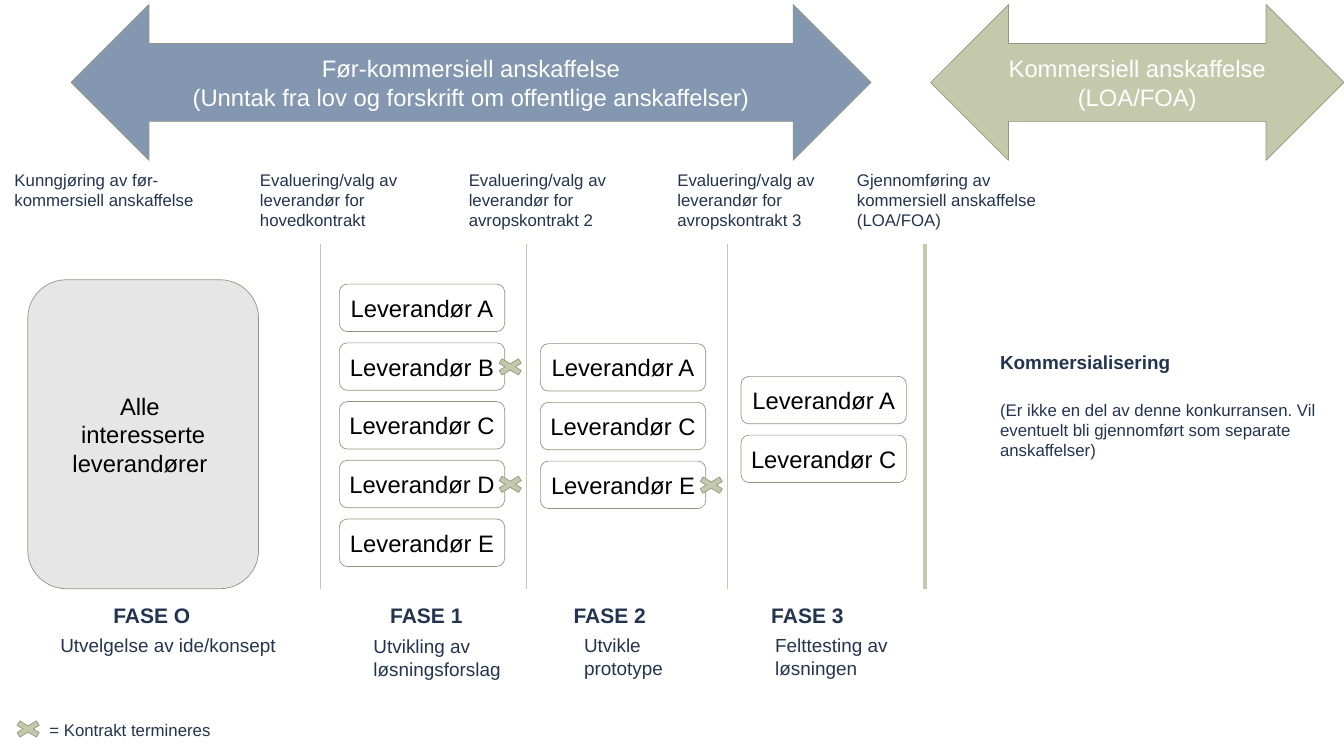
from pptx import Presentation
from pptx.dml.color import RGBColor
from pptx.enum.shapes import MSO_CONNECTOR, MSO_SHAPE
from pptx.enum.text import MSO_ANCHOR, PP_ALIGN
from pptx.oxml.ns import qn
from pptx.util import Cm, Pt

ARROW = MSO_SHAPE.LEFT_RIGHT_ARROW
CARD = MSO_SHAPE.FLOWCHART_ALTERNATE_PROCESS
CROSS = MSO_SHAPE.MATH_MULTIPLY
STRAIGHT = MSO_CONNECTOR.STRAIGHT
MIDDLE, TOP = MSO_ANCHOR.MIDDLE, MSO_ANCHOR.TOP
CENTER, LEFT = PP_ALIGN.CENTER, PP_ALIGN.LEFT

NAVY, BLUE, GREEN, OLIVE = "23344F", "8497B0", "C5C9AB", "92957F"
GREY, WHITE, BLACK = "E7E6E6", "FFFFFF", "000000"

deck = Presentation()
deck.slide_width, deck.slide_height = Cm(67.72), Cm(38.1)
page = deck.slides.add_slide(deck.slide_layouts[6])


def paint(fill, color):
    fill.solid()
    fill.fore_color.rgb = RGBColor.from_string(color)


def add_box(text, left, top, width, height, shape=None, fill=WHITE,
            size=24, color=NAVY, bold=False, gap=0):
    """Add a text box, or a filled shape when a preset is given."""
    place = [Cm(value) for value in (left, top, width, height)]
    if shape is None:
        box = page.shapes.add_textbox(*place)
    else:
        box = page.shapes.add_shape(shape, *place)
        box.shadow.inherit = False
        paint(box.fill, fill)
        paint(box.line.fill, OLIVE)
        box.line.width = Pt(1)
    frame = box.text_frame
    frame.word_wrap = True
    frame.vertical_anchor = MIDDLE if shape else TOP
    for index, content in enumerate(text.split("\n") if text else []):
        para = frame.add_paragraph() if index else frame.paragraphs[0]
        para.alignment = CENTER if shape else LEFT
        if index:
            para.space_before = Pt(gap)
        span = para.add_run()
        span.text = content
        span.font.name, span.font.size, span.font.bold = "Arial", Pt(size), bold
        paint(span.font.fill, color)
    return box


# Procurement arrows
add_box("Før-kommersiell anskaffelse\n"
        "(Unntak fra lov og forskrift om offentlige anskaffelser)",
        3.58, 0.23, 40.31, 7.85, ARROW, BLUE, size=34, color=WHITE)
add_box("Kommersiell anskaffelse\n(LOA/FOA)",
        46.89, 0.23, 20.83, 7.85, ARROW, GREEN, size=34, color=WHITE)

# Milestones
milestones = [
    (0.48, "Kunngjøring av før-kommersiell anskaffelse"),
    (12.85, "Evaluering/valg av leverandør for hovedkontrakt"),
    (23.37, "Evaluering/valg av leverandør for avropskontrakt 2"),
    (33.88, "Evaluering/valg av leverandør for avropskontrakt 3"),
    (42.93, "Gjennomføring av kommersiell anskaffelse (LOA/FOA)"),
]
for left, milestone in milestones:
    add_box(milestone, left, 8.43, 9.98, 3.28)

# Dividers between phases
for x, weight in [(16.13, 1.5), (26.54, 1.5), (36.68, 1.5), (46.61, 4.5)]:
    divider = page.shapes.add_connector(STRAIGHT, Cm(x), Cm(12.29), Cm(x), Cm(29.67))
    paint(divider.line.fill, GREEN)
    divider.line.width = Pt(weight)
    properties = divider._element.spPr
    properties.append(properties.makeelement(qn("a:effectLst"), {}))

# Suppliers per phase, with a cross where the contract ends
add_box("Alle \ninteresserte leverandører ", 1.4, 14.1, 11.63, 15.57,
        CARD, GREY, size=34, color=BLACK)
supplier_columns = [
    (17.1, 14.32, "ABCDE", "BD"),
    (27.23, 17.32, "ACE", "E"),
    (37.34, 18.97, "AC", ""),
]
for left, first_top, suppliers, terminated in supplier_columns:
    for row, supplier in enumerate(suppliers):
        top = first_top + row * 2.96
        add_box(f"Leverandør {supplier}", left, top, 8.33, 2.39,
                CARD, size=34, color=BLACK)
        if supplier in terminated:
            add_box("", left + 7.67, top + 0.64, 1.88, 1.14, CROSS, GREEN)

# Phase names and descriptions
phases = [
    ("FASE O", 5.46, "Utvelgelse av ide/konsept", 2.79, 31.8, 11.73),
    ("FASE 1", 19.41, "Utvikling av løsningsforslag", 18.57, 31.88, 11.73),
    ("FASE 2", 28.65, "Utvikle prototype", 29.18, 31.8, 6.76),
    ("FASE 3", 38.61, "Felttesting av løsningen", 38.81, 31.8, 6.76),
]
for name, name_left, description, left, top, width in phases:
    add_box(name, name_left, 30.23, 5.59, 1.7, size=30, bold=True)
    add_box(description, left, top, width, 3.28, size=27)

# Commercialisation note
note = add_box("Kommersialisering\n(Er ikke en del av denne konkurransen. Vil eventuelt "
               "bli gjennomført som separate anskaffelser)",
               50.14, 17.53, 16.46, 2.87, gap=37.5)
heading = note.text_frame.paragraphs[0].runs[0]
heading.font.size, heading.font.bold = Pt(27), True

# Legend
add_box("", 0.48, 36.17, 1.88, 1.14, CROSS, GREEN)
add_box("= Kontrakt termineres", 2.24, 36.17, 9.98, 1.4)

deck.save("out.pptx")
